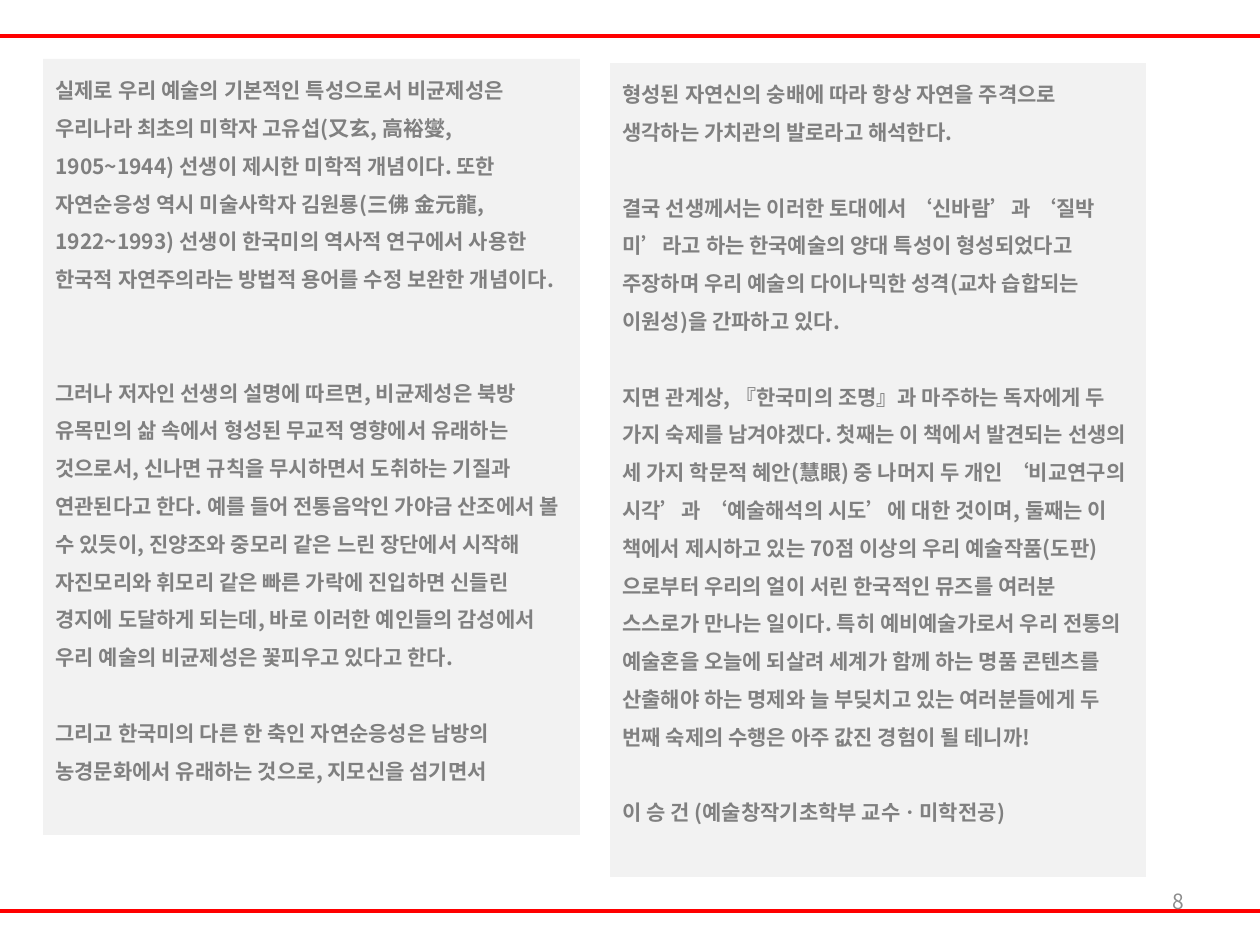
from lxml import etree
from pptx import Presentation, util as u
from pptx.dml.color import RGBColor
from pptx.enum import shapes, text
from pptx.oxml import ns

FONT = "Noto Sans CJK KR"
PITCH = 21.6
LEFT_TEXT = [
    ("실제로 우리 예술의 기본적인 특성으로서 비균제성은 우리나라 최초의 미학자 고유섭(又玄, 高裕燮, 1905~1944) 선생이 제시한 미학적 개념이다. 또한 자연순응성 역시 미술사학자 김원룡(三佛 金元龍, 1922~1993) 선생이 한국미의 역사적 연구에서 사용한 한국적 자연주의라는 방법적 용어를 수정 보완한 개념이다.", 2),
    ("그러나 저자인 선생의 설명에 따르면, 비균제성은 북방 유목민의 삶 속에서 형성된 무교적 영향에서 유래하는 것으로서, 신나면 규칙을 무시하면서 도취하는 기질과 연관된다고 한다. 예를 들어 전통음악인 가야금 산조에서 볼 수 있듯이, 진양조와 중모리 같은 느린 장단에서 시작해 자진모리와 휘모리 같은 빠른 가락에 진입하면 신들린 경지에 도달하게 되는데, 바로 이러한 예인들의 감성에서 우리 예술의 비균제성은 꽃피우고 있다고 한다.", 1),
    ("그리고 한국미의 다른 한 축인 자연순응성은 남방의 농경문화에서 유래하는 것으로, 지모신을 섬기면서", 0),
]
RIGHT_TEXT = [
    ("형성된 자연신의 숭배에 따라 항상 자연을 주격으로 생각하는 가치관의 발로라고 해석한다.", 1),
    ("결국 선생께서는 이러한 토대에서 ‘신바람’과 ‘질박미’라고 하는 한국예술의 양대 특성이 형성되었다고 주장하며 우리 예술의 다이나믹한 성격(교차 습합되는 이원성)을 간파하고 있다.", 1),
    ("지면 관계상, 『한국미의 조명』과 마주하는 독자에게 두 가지 숙제를 남겨야겠다. 첫째는 이 책에서 발견되는 선생의 세 가지 학문적 혜안(慧眼) 중 나머지 두 개인 ‘비교연구의 시각’과 ‘예술해석의 시도’에 대한 것이며, 둘째는 이 책에서 제시하고 있는 70점 이상의 우리 예술작품(도판)으로부터 우리의 얼이 서린 한국적인 뮤즈를 여러분 스스로가 만나는 일이다. 특히 예비예술가로서 우리 전통의 예술혼을 오늘에 되살려 세계가 함께 하는 명품 콘텐츠를 산출해야 하는 명제와 늘 부딪치고 있는 여러분들에게 두 번째 숙제의 수행은 아주 값진 경험이 될 테니까!", 1),
    ("이 승 건 (예술창작기초학부 교수ㆍ미학전공)", 0),
]


def px(length):
    return u.Emu(round(length * 914400 / 126))


def color(value):
    return RGBColor.from_string(value)


def style_paragraph(para, value, bold=False):
    font = para.font
    font.name, font.size, font.bold = FONT, u.Pt(12), bold
    font.color.rgb = color(value)
    properties = para._p.pPr.find(ns.qn("a:defRPr"))
    etree.SubElement(properties, ns.qn("a:ea")).set("typeface", FONT)


def add_rule(page, left, top, width):
    rule = page.shapes.add_connector(
        shapes.MSO_CONNECTOR.STRAIGHT, px(left), px(top), px(left + width), px(top))
    rule.line.color.rgb = color("FF0000")
    rule.line.width = u.Pt(2)
    etree.SubElement(rule._element.spPr, ns.qn("a:effectLst"))


def add_column(page, left, top, width, height, passages):
    box = page.shapes.add_shape(
        shapes.MSO_SHAPE.RECTANGLE, px(left), px(top), px(width), px(height))
    box.shadow.inherit = False
    box.fill.solid()
    box.fill.fore_color.rgb = color("F2F2F2")
    box.line.fill.background()
    frame = box.text_frame
    frame.word_wrap = True
    frame.vertical_anchor = text.MSO_ANCHOR.TOP
    for index, (passage, gap_lines) in enumerate(passages):
        para = frame.add_paragraph() if index else frame.paragraphs[0]
        para.text = passage
        para.alignment = text.PP_ALIGN.LEFT
        para.line_spacing = u.Pt(PITCH)
        para.space_after = u.Pt(PITCH * gap_lines)
        style_paragraph(para, "808080", bold=True)


def add_page_number(page, left, top, width, height, number):
    box = page.shapes.add_textbox(px(left), px(top), px(width), px(height))
    frame = box.text_frame
    frame.word_wrap = True
    frame.vertical_anchor = text.MSO_ANCHOR.MIDDLE
    para = frame.paragraphs[0]
    para.text = number
    para.alignment = text.PP_ALIGN.RIGHT
    style_paragraph(para, "8C8C8C")


def main():
    deck = Presentation()
    deck.slide_width, deck.slide_height = px(1260), px(945)
    page = deck.slides.add_slide(deck.slide_layouts[6])
    for top in (36, 911):
        add_rule(page, 0, top, 1260)
    add_column(page, 43, 59, 537, 776, LEFT_TEXT)
    add_page_number(page, 903, 876, 294, 50, "8")
    add_column(page, 610, 63, 536, 814, RIGHT_TEXT)
    deck.save("out.pptx")


if __name__ == "__main__":
    main()
